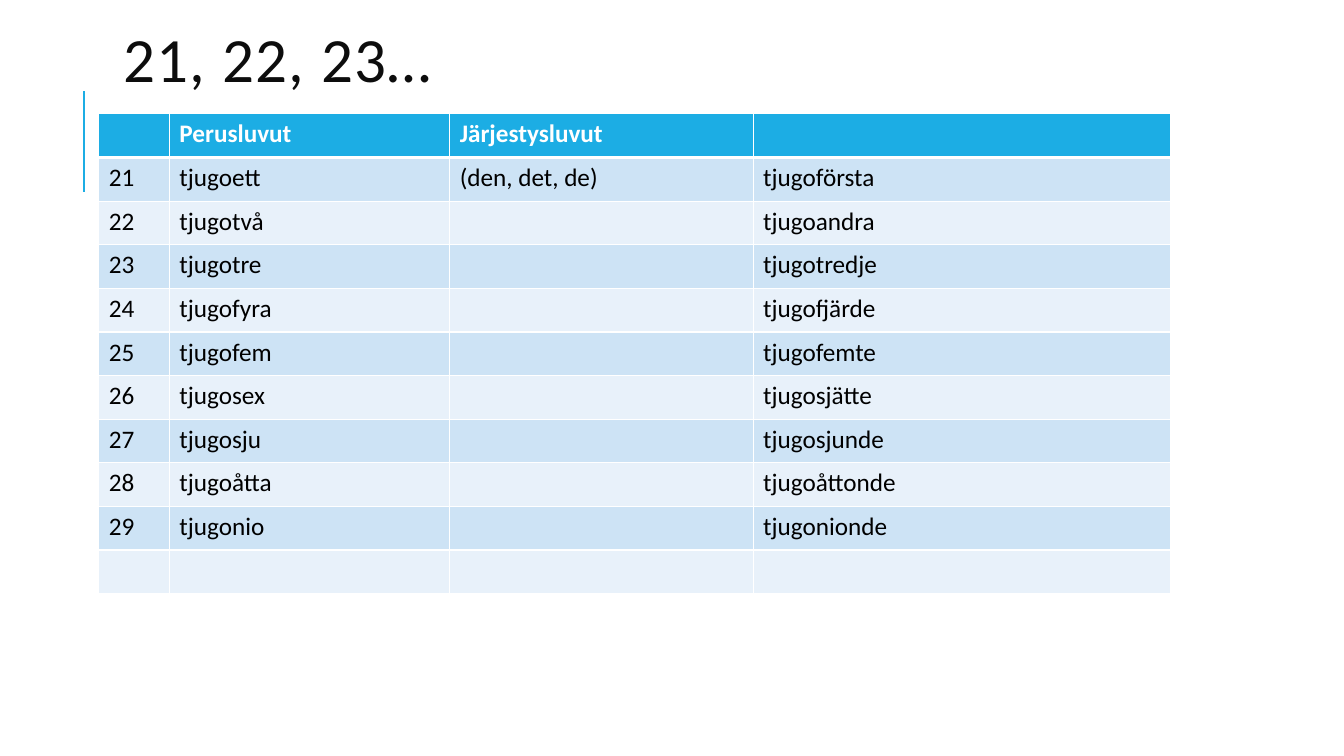
"""Build the slide on Swedish cardinal and ordinal numbers from 21 to 29."""
from dataclasses import dataclass

from lxml import etree
from pptx import Presentation
from pptx.dml.color import RGBColor
from pptx.enum.shapes import MSO_CONNECTOR
from pptx.enum.text import MSO_ANCHOR, MSO_AUTO_SIZE, PP_ALIGN
from pptx.oxml.ns import qn
from pptx.util import Inches, Pt

STRAIGHT = MSO_CONNECTOR.STRAIGHT
MIDDLE = MSO_ANCHOR.MIDDLE
NO_AUTOFIT = MSO_AUTO_SIZE.NONE
LEFT = PP_ALIGN.LEFT
TITLE_ONLY = 5


@dataclass(frozen=True)
class Theme:
    font: str = "Calibri"
    accent: str = "1CADE4"
    heading: str = "0D0D0D"
    body: str = "000000"
    white: str = "FFFFFF"
    bands: tuple = ("CDE3F5", "E8F1FA")
    title_size: float = 45
    table_size: float = 18
    rule_width: float = 1.5
    border_width: float = 1
    header_border_width: float = 3


def write_text(frame, text, *, font, size, color, bold=False, tracking=0, line_spacing=None):
    paragraph = frame.paragraphs[0]
    paragraph.alignment = LEFT
    paragraph.line_spacing = line_spacing
    run = paragraph.add_run()
    run.text = text
    run.font.name = font
    run.font.size = Pt(size)
    run.font.bold = bold
    run.font.color.rgb = RGBColor.from_string(color)
    if tracking:
        run.font._element.set("spc", str(tracking * 100))


class SlideBuilder:
    def __init__(self, presentation, theme):
        self.theme = theme
        self.slide = presentation.slides.add_slide(presentation.slide_layouts[TITLE_ONLY])

    def title(self, text, left, top, width, height):
        heading = self.slide.shapes.title
        heading.left, heading.top = Inches(left), Inches(top)
        heading.width, heading.height = Inches(width), Inches(height)
        frame = heading.text_frame
        frame.word_wrap = True
        frame.auto_size = NO_AUTOFIT
        frame.vertical_anchor = MIDDLE
        write_text(frame, text, font=self.theme.font, size=self.theme.title_size,
                   color=self.theme.heading, tracking=1, line_spacing=0.8)

    def rule(self, x, top, bottom):
        accent_rule = self.slide.shapes.add_connector(
            STRAIGHT, Inches(x), Inches(bottom), Inches(x), Inches(top))
        accent_rule.line.color.rgb = RGBColor.from_string(self.theme.accent)
        accent_rule.line.width = Pt(self.theme.rule_width)
        etree.SubElement(accent_rule._element.spPr, qn("a:effectLst"))

    def table(self, rows, left, top, height, column_widths):
        table = self.slide.shapes.add_table(
            len(rows), len(column_widths), Inches(left), Inches(top),
            Inches(sum(column_widths)), Inches(height)).table
        for column, width in zip(table.columns, column_widths):
            column.width = Inches(width)
        for row_index, row in enumerate(rows):
            for column_index, text in enumerate(row):
                self.cell(table.cell(row_index, column_index), text, row_index)

    def cell(self, cell, text, row_index):
        theme = self.theme
        is_header = row_index == 0
        fill = theme.accent if is_header else theme.bands[(row_index - 1) % 2]
        cell.fill.solid()
        cell.fill.fore_color.rgb = RGBColor.from_string(fill)
        widths = dict.fromkeys(("lnL", "lnR", "lnT", "lnB"), theme.border_width)
        if is_header:
            widths["lnB"] = theme.header_border_width
        elif row_index == 1:
            widths["lnT"] = theme.header_border_width
        self.borders(cell, widths)
        if text:
            write_text(cell.text_frame, text, font=theme.font, size=theme.table_size,
                       color=theme.white if is_header else theme.body, bold=is_header)

    def borders(self, cell, widths):
        properties = cell._tc.get_or_add_tcPr()
        for position, (side, width) in enumerate(widths.items()):
            border = etree.Element(qn(f"a:{side}"), w=str(Pt(width)))
            solid = etree.SubElement(border, qn("a:solidFill"))
            etree.SubElement(solid, qn("a:srgbClr"), val=self.theme.white)
            properties.insert(position, border)


def main():
    presentation = Presentation()
    presentation.slide_width = Inches(13.33)
    presentation.slide_height = Inches(7.5)
    numerals = [
        ("ett", "första"), ("två", "andra"), ("tre", "tredje"),
        ("fyra", "fjärde"), ("fem", "femte"), ("sex", "sjätte"),
        ("sju", "sjunde"), ("åtta", "åttonde"), ("nio", "nionde"),
    ]
    rows = [("", "Perusluvut", "Järjestysluvut", "")]
    for number, (cardinal, ordinal) in enumerate(numerals, start=21):
        articles = "(den, det, de)" if number == 21 else ""
        rows.append((str(number), f"tjugo{cardinal}", articles, f"tjugo{ordinal}"))
    rows.append(("", "", "", ""))

    builder = SlideBuilder(presentation, Theme())
    builder.rule(0.83, 0.9, 1.9)
    builder.title("21, 22, 23…", 1.12, 0.15, 10.63, 0.97)
    builder.table(rows, 0.98, 1.13, 4.76, (0.7, 2.78, 3.01, 4.14))
    presentation.save("out.pptx")


if __name__ == "__main__":
    main()
